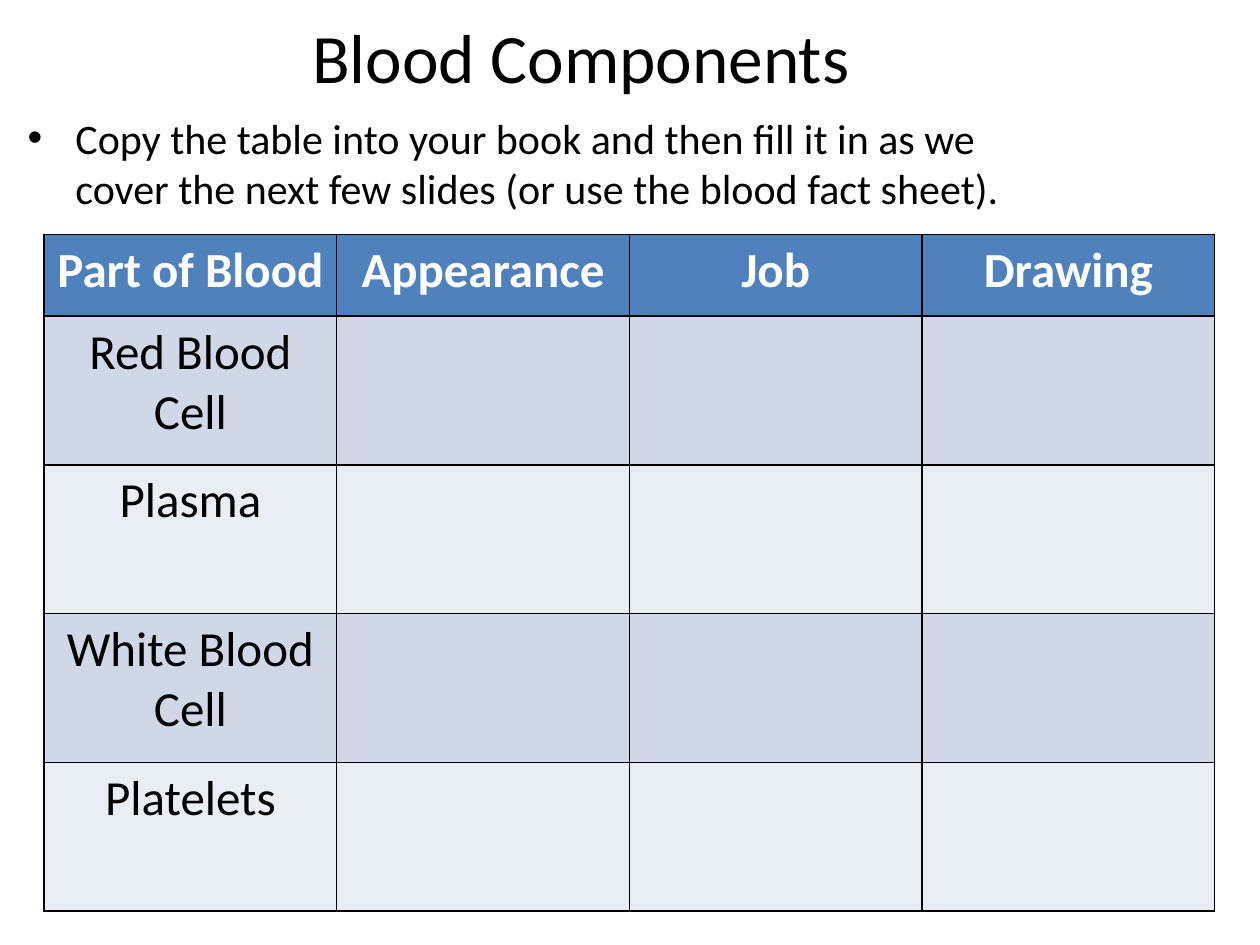
"""Build the Blood Components worksheet slide."""
from lxml import etree
from pptx import Presentation
from pptx import util as u
from pptx.dml.color import RGBColor
from pptx.enum import text
from pptx.oxml import ns

TITLE = "Blood Components"
TASK = ("Copy the table into your book and then fill it in as we "
        "cover the next few slides (or use the blood fact sheet).")
HEADINGS = ["Part of Blood", "Appearance", "Job", "Drawing"]
PARTS = ["Red Blood Cell", "Plasma", "White Blood Cell", "Platelets"]

FONT = "Calibri"
BLACK = RGBColor(0x00, 0x00, 0x00)
WHITE = RGBColor(0xFF, 0xFF, 0xFF)
HEADER = RGBColor(0x4F, 0x81, 0xBD)
BANDS = [RGBColor(0xD0, 0xD8, 0xE8), RGBColor(0xE9, 0xED, 0xF4)]

TABLE_WIDTH = 9.29
HEADER_HEIGHT, PART_HEIGHT = 0.65, 1.18


def box(left, top, width, height):
    return [u.Inches(side) for side in (left, top, width, height)]


def style(paragraph, size, color, bold=False, align=text.PP_ALIGN.CENTER):
    paragraph.alignment = align
    font = paragraph.font
    font.name, font.size, font.bold = FONT, u.Pt(size), bold
    font.color.rgb = color


def add_bullet(paragraph, indent):
    props = paragraph._p.get_or_add_pPr()
    props.set("marL", str(u.Inches(indent)))
    props.set("indent", str(-u.Inches(indent)))
    etree.SubElement(props, ns.qn("a:buFont"), typeface="Arial")
    etree.SubElement(props, ns.qn("a:buChar"), char="•")


def add_borders(cell):
    props = cell._tc.get_or_add_tcPr()
    for position, side in enumerate(("lnL", "lnR", "lnT", "lnB")):
        line = etree.Element(ns.qn(f"a:{side}"), w=str(u.Pt(1)))
        fill = etree.SubElement(line, ns.qn("a:solidFill"))
        etree.SubElement(fill, ns.qn("a:srgbClr"), val=str(BLACK))
        props.insert(position, line)


def add_title(slide):
    title = slide.shapes.title
    title.left, title.top, title.width, title.height = box(0.2, 0.21, 8.82, 0.47)
    frame = title.text_frame
    frame.text = TITLE
    frame.auto_size = text.MSO_AUTO_SIZE.NONE
    frame.vertical_anchor = text.MSO_ANCHOR.MIDDLE
    style(frame.paragraphs[0], 39.6, BLACK)


def add_task(slide):
    frame = slide.shapes.add_textbox(*box(0.12, 0.84, 7.95, 6.54)).text_frame
    frame.word_wrap = True
    frame.text = TASK
    task = frame.paragraphs[0]
    add_bullet(task, 0.38)
    style(task, 24, BLACK, align=text.PP_ALIGN.LEFT)


def add_components(slide):
    rows = [HEADINGS] + [[part] + [""] * (len(HEADINGS) - 1) for part in PARTS]
    height = HEADER_HEIGHT + PART_HEIGHT * len(PARTS)
    components = slide.shapes.add_table(
        len(rows), len(HEADINGS), *box(0.35, 1.86, TABLE_WIDTH, height)).table
    for column in components.columns:
        column.width = u.Inches(TABLE_WIDTH / len(HEADINGS))
    for r, row in enumerate(rows):
        heading = r == 0
        components.rows[r].height = u.Inches(HEADER_HEIGHT if heading else PART_HEIGHT)
        for c, label in enumerate(row):
            cell = components.cell(r, c)
            cell.text = label
            cell.fill.solid()
            cell.fill.fore_color.rgb = HEADER if heading else BANDS[(r - 1) % 2]
            style(cell.text_frame.paragraphs[0], 28, WHITE if heading else BLACK, heading)
            add_borders(cell)


def main():
    deck = Presentation()
    deck.slide_width, deck.slide_height = u.Inches(10), u.Inches(7.5)
    slide = deck.slides.add_slide(deck.slide_layouts.get_by_name("Title Only"))
    add_title(slide)
    add_task(slide)
    add_components(slide)
    deck.save("out.pptx")


if __name__ == "__main__":
    main()
